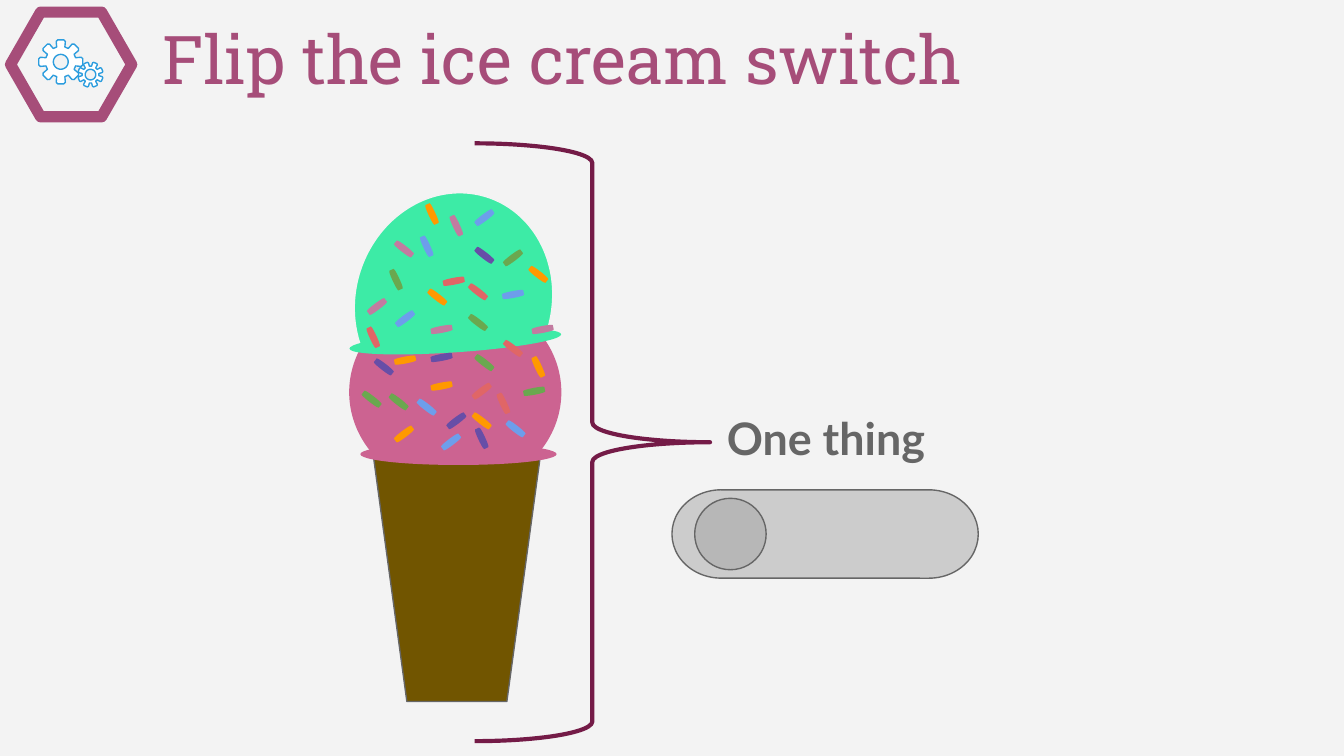
from math import cos, pi, sin

from pptx import Presentation
from pptx.dml.color import RGBColor
from pptx.enum import shapes, text
from pptx.util import Cm, Pt

KIND = shapes.MSO_SHAPE
PLUM, MAROON, GREY, PAPER = "A64D79", "741B47", "666666", "F3F3F3"
MINT, BERRY, WAFER = "3DEBA6", "CC6391", "715500"
BLUE, GREEN, PINK = "6D9EEB", "6AA84F", "C27BA0"
PURPLE, ORANGE, RED = "674EA7", "FF9900", "E06666"

# rotation in degrees: colour, left and top of each sprinkle in cm
SPRINKLES = {
    335: [
        (BLUE, 8, 4.45), (GREEN, 7.42, 5.08), (PINK, 8.56, 4.06), (PURPLE, 9.04, 8.08),
        (ORANGE, 8.1, 3.84), (RED, 6.99, 6.17), (RED, 9.45, 7.42), (ORANGE, 10.11, 6.73),
    ],
    52.9: [
        (BLUE, 7.59, 5.82), (GREEN, 9.63, 4.67), (PINK, 7.06, 5.59), (PURPLE, 8.56, 7.75),
        (ORANGE, 7.57, 8), (RED, 9.04, 7.19), (BLUE, 8.46, 8.15), (BLUE, 9.09, 3.91),
    ],
    307.8: [
        (BLUE, 9.68, 7.9), (GREEN, 7.47, 7.39), (PINK, 7.57, 4.5), (PURPLE, 7.19, 6.73),
        (ORANGE, 8.2, 5.41), (RED, 8.97, 5.31), (ORANGE, 9.04, 7.75), (GREEN, 8.97, 5.89),
        (PURPLE, 9.09, 4.62), (GREEN, 9.09, 6.65), (GREEN, 6.96, 7.34), (RED, 9.63, 6.38),
        (BLUE, 8, 7.49), (ORANGE, 10.11, 4.98),
    ],
    259.1: [
        (BLUE, 9.63, 5.36), (GREEN, 10.03, 7.19), (PINK, 8.28, 6.02), (PURPLE, 8.28, 6.55),
        (ORANGE, 8.28, 7.09), (RED, 8.51, 5.11), (ORANGE, 7.59, 6.6), (PINK, 10.19, 6.02),
    ],
}


def rgb(colour):
    return RGBColor.from_string(colour)


def paint(shape, fill=None, line=None, weight=0.75):
    shape.shadow.inherit = False
    if fill:
        shape.fill.solid()
        shape.fill.fore_color.rgb = rgb(fill)
    else:
        shape.fill.background()
    if line:
        shape.line.color.rgb = rgb(line)
        shape.line.width = Pt(weight)
    else:
        shape.line.fill.background()


def add_figure(parent, kind, box, fill=None, line=None, weight=0.75, turn=0, adjust=()):
    figure = parent.shapes.add_shape(kind, *map(Cm, box))
    figure.rotation = turn
    for index, value in enumerate(adjust):
        figure.adjustments[index] = value
    paint(figure, fill, line, weight)


def add_text(slide, words, box, font, size, colour, bold=False,
             align=text.PP_ALIGN.LEFT, anchor=text.MSO_ANCHOR.TOP):
    frame = slide.shapes.add_textbox(*map(Cm, box)).text_frame
    frame.word_wrap = True
    frame.vertical_anchor = anchor
    frame.margin_left = frame.margin_right = Cm(0.25)
    frame.margin_top = frame.margin_bottom = Cm(0.25)
    paragraph = frame.paragraphs[0]
    paragraph.text = words
    paragraph.alignment = align
    paragraph.font.name = font
    paragraph.font.size = Pt(size)
    paragraph.font.bold = bold
    paragraph.font.color.rgb = rgb(colour)


def add_gear(parent, x, y, tip, root, hub, turn=0, teeth=8):
    """Outline a toothed wheel around (x, y) with a round hole."""
    def point(radius, angle):
        return Cm(x + radius * sin(angle)), Cm(y - radius * cos(angle))

    profile = [(root, -0.27), (tip * 0.94, -0.22), (tip, -0.14),
               (tip, 0.14), (tip * 0.94, 0.22), (root, 0.27)]
    rim = [point(radius, turn + 2 * pi * tooth / teeth + offset)
           for tooth in range(teeth) for radius, offset in profile]
    hole = [point(hub, -2 * pi * step / 32) for step in range(32)]
    outline = parent.shapes.build_freeform(*rim[0])
    outline.add_line_segments(rim[1:])
    outline.move_to(*hole[0])
    outline.add_line_segments(hole[1:])
    paint(outline.convert_to_shape(), "FFFFFF", "2C9DDE")


def add_badge(slide):
    add_figure(slide, KIND.HEXAGON, (0.2, 0.23, 2.29, 1.98), line=PLUM, weight=6,
               adjust=[0.287])
    gears = slide.shapes.add_group_shape()
    add_gear(gears, 1.15, 1.17, tip=0.42, root=0.29, hub=0.14)
    add_gear(gears, 1.71, 1.41, tip=0.24, root=0.16, hub=0.1, turn=pi / 8)


def add_ice_cream(slide):
    add_figure(slide, KIND.OVAL, (6.6, 5.56, 4.01, 3.71), BERRY)
    add_figure(slide, KIND.FLOWCHART_MANUAL_OPERATION, (7.06, 8.64, 3.15, 4.62), WAFER, GREY)
    add_figure(slide, KIND.CHORD, (6.5, 3.84, 4.14, 3.71), MINT, PAPER, turn=107.8,
               adjust=[27, 164.22])
    add_figure(slide, KIND.OVAL, (6.6, 6.25, 4.01, 0.41), MINT, turn=356.1)
    add_figure(slide, KIND.OVAL, (6.81, 8.38, 3.71, 0.41), BERRY)
    for turn, sprinkles in SPRINKLES.items():
        for colour, left, top in sprinkles:
            add_figure(slide, KIND.FLOWCHART_TERMINATOR, (left, top, 0.13, 0.41), colour,
                       turn=turn)


def add_switch(slide):
    switch = slide.shapes.add_group_shape()
    add_figure(switch, KIND.FLOWCHART_TERMINATOR, (12.7, 9.26, 5.79, 1.67), "CCCCCC", GREY)
    add_figure(switch, KIND.OVAL, (13.13, 9.42, 1.35, 1.35), "B7B7B7", GREY)


def main():
    deck = Presentation()
    deck.slide_width, deck.slide_height = Cm(25.4), Cm(14.29)
    slide = deck.slides.add_slide(deck.slide_layouts[6])
    slide.background.fill.solid()
    slide.background.fill.fore_color.rgb = rgb(PAPER)

    add_badge(slide)
    add_ice_cream(slide)
    add_figure(slide, KIND.RIGHT_BRACE, (8.97, 2.71, 4.45, 11.3), line=MAROON, weight=2.25)
    add_text(slide, "One thing", (13.21, 7.52, 4.8, 1.68), "Lato", 24, GREY, bold=True,
             align=text.PP_ALIGN.CENTER)
    add_text(slide, "Flip the ice cream switch", (2.82, 0.3, 21.39, 1.8), "Roboto Slab", 36,
             PLUM, anchor=text.MSO_ANCHOR.BOTTOM)
    add_switch(slide)
    deck.save("out.pptx")


if __name__ == "__main__":
    main()
